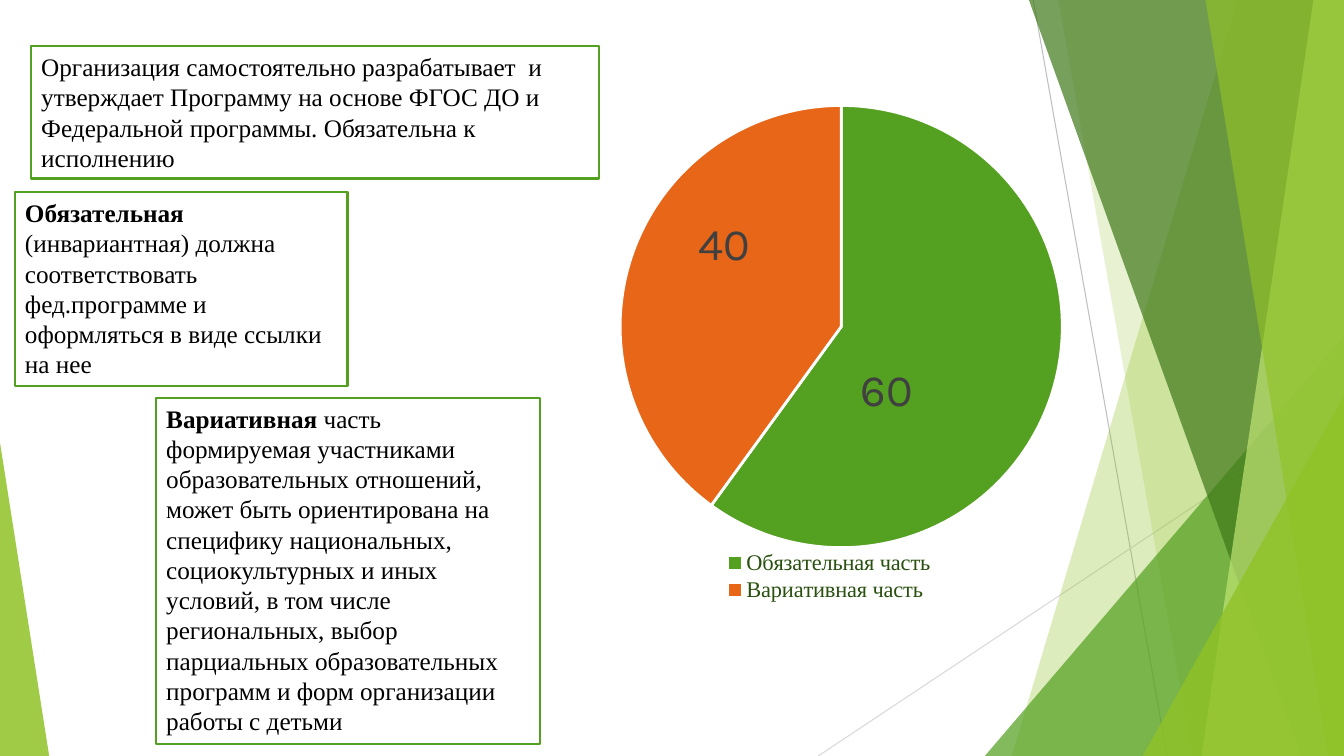
from lxml.etree import SubElement
from pptx import Presentation
from pptx.chart.data import CategoryChartData as ChartData
from pptx.dml.color import RGBColor as RGB
from pptx.enum.chart import XL_CHART_TYPE as Kind, XL_LABEL_POSITION as Spot
from pptx.enum.chart import XL_LEGEND_POSITION as Side
from pptx.enum.shapes import MSO_CONNECTOR as Link, MSO_SHAPE as Form
from pptx.enum.text import MSO_ANCHOR as Anchor, PP_ALIGN as Align
from pptx.oxml import parse_xml
from pptx.oxml.ns import nsdecls, qn
from pptx.util import Cm, Pt

WIDE, HIGH = 33.87, 19.05
COLORS = {
    "white": "FFFFFF", "black": "000000", "label": "404040", "legend": "2A5010",
    "grey": "BFBFBF", "pale": "D9D9D9", "lime": "90C226", "light": "C0E474",
    "green": "54A021", "dark": "3F7819", "orange": "E76618",
}


def layout(inner=False, **parts):
    """Build a manual chart layout from fractions of the chart's size."""
    target = '<c:layoutTarget val="inner"/>' if inner else ""
    modes = "".join(f'<c:{k}Mode val="edge"/>' for k in "xy") if "w" in parts else ""
    sizes = "".join(f'<c:{k} val="{v}"/>' for k, v in parts.items())
    return parse_xml(f'<c:layout {nsdecls("c")}><c:manualLayout>{target}{modes}'
                     f'{sizes}</c:manualLayout></c:layout>')


class Deck:
    """Holds the style and the current slide."""

    serif, sans = "Times New Roman", "Karla"

    def __init__(self):
        self.file = Presentation()
        self.file.slide_width, self.file.slide_height = Cm(WIDE), Cm(HIGH)
        self.slide = self.file.slides.add_slide(self.file.slide_layouts[6])
        self.shapes = self.slide.shapes

    def tint(self, fill, color, alpha=100):
        fill.solid()
        fill.fore_color.rgb = RGB.from_string(COLORS[color])
        if alpha < 100:
            node = fill._xPr.find(qn("a:solidFill"))[0]
            SubElement(node, qn("a:alpha")).set("val", str(alpha * 1000))

    def style(self, font, size, color, name):
        font.size, font.name = Pt(size), name
        font.color.rgb = RGB.from_string(COLORS[color])

    def line(self, color, *ends):
        link = self.shapes.add_connector(Link.STRAIGHT, *map(Cm, ends))
        self.tint(link.line.fill, color)
        link.line.width = Pt(0.75)
        SubElement(link._element.spPr, qn("a:effectLst"))

    def pane(self, top, base, color, alpha):
        """Draw a full-height pane from a slanted left edge to the slide's right."""
        path = self.shapes.build_freeform(Cm(top), 0)
        path.add_line_segments([(Cm(WIDE), 0), (Cm(WIDE), Cm(HIGH)),
                                (Cm(base), Cm(HIGH))])
        self.plain(path.convert_to_shape(), color, alpha)

    def wedge(self, left, width, height, peak, color, alpha):
        """Draw a triangle standing on the slide's bottom edge."""
        shape = self.shapes.add_shape(Form.ISOSCELES_TRIANGLE, Cm(left),
                                      Cm(HIGH - height), Cm(width), Cm(height))
        shape.adjustments[0] = peak
        self.plain(shape, color, alpha)

    def plain(self, shape, color, alpha=100):
        shape.shadow.inherit = False
        self.tint(shape.fill, color, alpha)
        shape.line.fill.background()

    def box(self, area, text, lead=""):
        """Draw a framed text box whose lead words are bold."""
        shape = self.shapes.add_shape(Form.RECTANGLE, *map(Cm, area))
        self.plain(shape, "white")
        self.tint(shape.line.fill, "green")
        shape.line.width = Pt(1.5)
        frame = shape.text_frame
        frame.word_wrap, frame.vertical_anchor = True, Anchor.TOP
        para = frame.paragraphs[0]
        para.alignment = Align.LEFT
        self.style(para.font, 18, "black", self.serif)
        if lead:
            run = para.add_run()
            run.text, run.font.bold = lead, True
        para.add_run().text = text

    def pie(self, area, slices):
        """Draw a pie from (name, value, color, label shift) slices."""
        data = ChartData()
        data.categories = [part[0] for part in slices]
        data.add_series("Series 1", [part[1] for part in slices])
        chart = self.shapes.add_chart(Kind.PIE, *map(Cm, area), data).chart
        self.style(chart.font, 10, "black", self.sans)
        chart.has_title = False
        chart.has_legend = True
        legend = chart.legend
        legend.position, legend.include_in_layout = Side.BOTTOM, False
        self.style(legend.font, 16, "legend", self.serif)
        node = chart.element.find(".//" + qn("c:legendPos"))
        node.addnext(layout(x=0.3, y=0.89, w=0.36, h=0.11))

        plot = chart.plots[0]
        plot.vary_by_categories = True
        for old in chart.element.findall(".//" + qn("c:plotArea") + "/" + qn("c:layout")):
            old.getparent().remove(old)
        area = chart.element.find(".//" + qn("c:plotArea"))
        area.insert(0, layout(True, x=0.13, y=0.03, w=0.74, h=0.86))
        for i, (_, _, color, _) in enumerate(slices):
            point = plot.series[0].points[i]
            self.tint(point.format.fill, color)
            self.tint(point.format.line.fill, "white")
            point.format.line.width = Pt(2)
            label = point.data_label
            self.style(label.font, 32, "label", self.sans)
            label.position = Spot.CENTER
        for node, part in zip(chart.element.iter(qn("c:dLbl")), slices):
            x, y = part[3]
            node.find(qn("c:idx")).addnext(layout(x=x, y=y))


def main():
    deck = Deck()
    deck.line("grey", 26.04, 0, 29.41, HIGH)
    deck.line("pale", WIDE, 10.24, 20.62, HIGH)
    deck.pane(31.19, 25.5, "lime", 30)
    deck.pane(26.67, 30.05, "lime", 20)
    deck.wedge(24.82, 9.05, 10.59, 1, "green", 72)
    deck.pane(25.93, 32.79, "dark", 70)
    deck.pane(33.1, 30.28, "light", 70)
    deck.pane(30.38, 33.48, "lime", 65)
    deck.wedge(28.8, 5.07, 9.07, 1, "lime", 80)
    deck.wedge(0, 1.24, 7.9, 0, "lime", 85)

    deck.box((3.94, 10.03, 9.68, 8.71),
             "часть формируемая участниками образовательных отношений, может быть "
             "ориентирована на специфику национальных, социокультурных и иных условий, "
             "в том числе региональных, выбор парциальных образовательных программ "
             "и форм организации работы с детьми", "Вариативная ")
    deck.box((0.79, 1.17, 14.3, 3.33),
             "Организация самостоятельно разрабатывает  и утверждает Программу на основе "
             "ФГОС ДО и Федеральной программы. Обязательна к исполнению")
    deck.pie((13.67, 2.26, 15.06, 12.98), [
        ("Обязательная часть", 60, "green", (-0.1, 0.06)),
        ("Вариативная часть", 40, "orange", (-0.02, -0.09)),
    ])
    deck.box((0.38, 4.85, 8.38, 4.88),
             "(инвариантная) должна соответствовать фед.программе и оформляться "
             "в виде ссылки на нее", "Обязательная ")
    deck.file.save("out.pptx")


if __name__ == "__main__":
    main()
